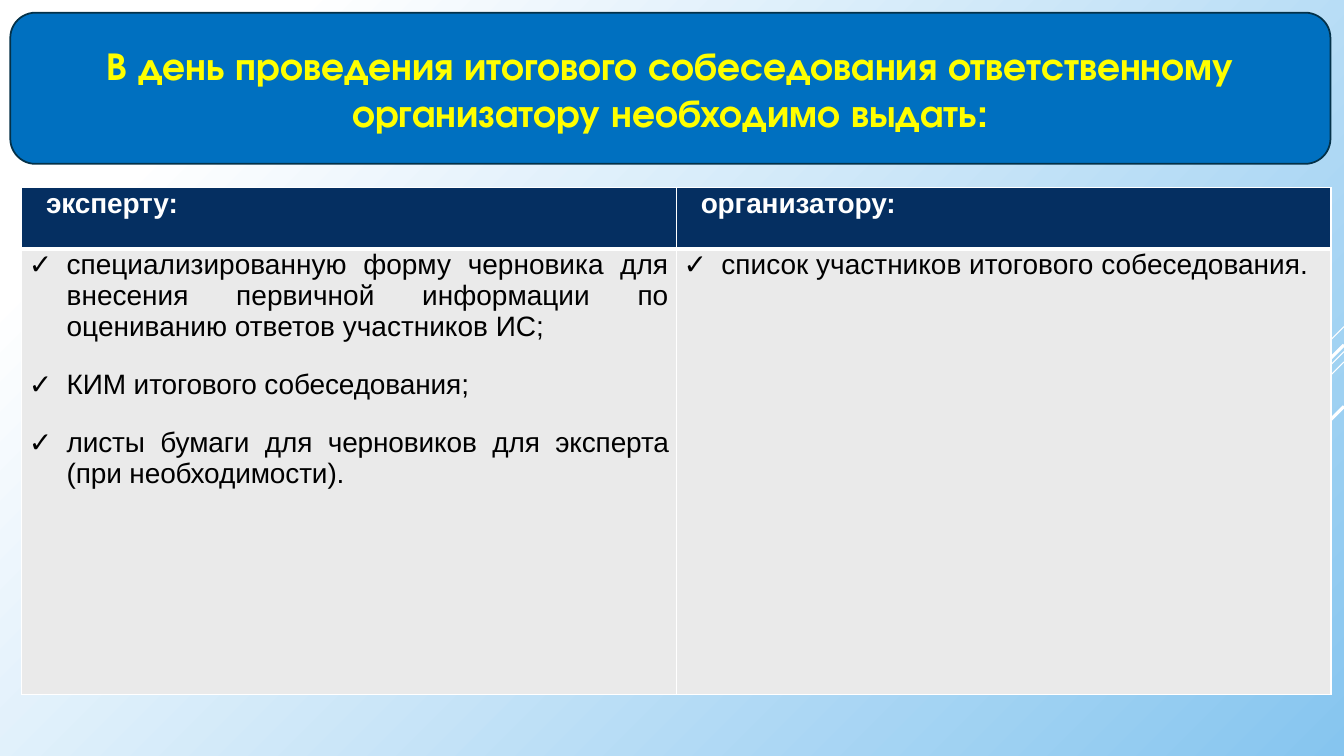
from lxml import etree
from pptx import Presentation
from pptx import util as u
from pptx.dml.color import RGBColor
from pptx.enum import shapes, text
from pptx.oxml.ns import qn

TITLE = "В день проведения итогового собеседования ответственному организатору необходимо выдать:"
# Each column: heading, then its items as (wording, letter spacing in 1/100 pt)
COLUMNS = [
    ("эксперту:", [
        ("специализированную форму черновика для внесения первичной информации "
         "по оцениванию ответов участников ИС;", 0),
        ("КИМ итогового собеседования;", -10),
        ("листы бумаги для черновиков для эксперта (при необходимости).", -10),
    ]),
    ("организатору:", [("список участников итогового собеседования.", 0)]),
]
# Diagonal strokes from the right edge: top, extent (cm), width (pt)
STROKES = [(8.23, 2.54, 0.75), (8.86, 8.28, 0.75), (9.12, 5.26, 0.75),
           (8.69, 4.85, 2.25), (10.24, 3.53, 2.25)]
COLORS = {"white": "FFFFFF", "sky": "86C5EF", "banner": "0070C0", "outline": "043148",
          "title": "FFFF00", "header": "052F61", "body": "EAEAEA", "black": "000000"}
SLIDE_W, SLIDE_H = 33.87, 19.05
COL_W, ROW_H = 16.5, (1.54, 11.23)


def rgb(name):
    return RGBColor.from_string(COLORS[name])


def add_span(para, wording, font, size, color, bold, spacing=0):
    span = para.add_run()
    span.text = wording
    span.font.name, span.font.size, span.font.bold = font, u.Pt(size), bold
    span.font.color.rgb = rgb(color)
    if spacing:
        span.font._element.set("spc", str(spacing))


def format_para(para, margin, indent=0, bullet=None):
    para.alignment = text.PP_ALIGN.JUSTIFY
    props = para._p.get_or_add_pPr()
    props.set("marL", str(u.Cm(margin)))
    props.set("indent", str(u.Cm(indent)))
    if bullet:
        etree.SubElement(props, qn("a:buFont")).set("typeface", "Arial")
        etree.SubElement(props, qn("a:buChar")).set("char", bullet)


def format_cell(cell, fill, top, bottom):
    cell.margin_left = cell.margin_right = u.Cm(0.19)
    cell.margin_top = cell.margin_bottom = 0
    props = cell._tc.get_or_add_tcPr()
    for side, width in (("L", 1), ("R", 1), ("T", top), ("B", bottom)):
        border = etree.SubElement(props, qn("a:ln" + side), w=str(u.Pt(width)))
        solid = etree.SubElement(border, qn("a:solidFill"))
        etree.SubElement(solid, qn("a:srgbClr"), val=COLORS["white"])
    cell.fill.solid()
    cell.fill.fore_color.rgb = rgb(fill)


def main():
    deck = Presentation()
    deck.slide_width, deck.slide_height = u.Cm(SLIDE_W), u.Cm(SLIDE_H)
    page = deck.slides.add_slide(deck.slide_layouts[6])

    # Background gradient
    backdrop = page.background.fill
    backdrop.gradient()
    backdrop.gradient_angle = 315
    for stop, (color, position) in zip(backdrop.gradient_stops, [("white", 0.14), ("sky", 1)]):
        stop.color.rgb = rgb(color)
        stop.position = position

    # Diagonal strokes
    for top, extent, width in STROKES:
        stroke = page.shapes.add_connector(
            shapes.MSO_CONNECTOR.STRAIGHT, u.Cm(SLIDE_W), u.Cm(top),
            u.Cm(SLIDE_W - extent), u.Cm(top + extent))
        stroke.line.color.rgb = rgb("white")
        stroke.line.width = u.Pt(width)
        etree.SubElement(stroke._element.spPr, qn("a:effectLst"))

    # Title banner
    banner = page.shapes.add_shape(shapes.MSO_SHAPE.ROUNDED_RECTANGLE,
                                   u.Cm(0.26), u.Cm(0.32), u.Cm(33.27), u.Cm(3.81))
    banner.shadow.inherit = False
    banner.fill.solid()
    banner.fill.fore_color.rgb = rgb("banner")
    banner.line.color.rgb = rgb("outline")
    banner.line.width = u.Pt(1.25)
    frame = banner.text_frame
    frame.word_wrap = True
    frame.vertical_anchor = text.MSO_ANCHOR.MIDDLE
    para = frame.paragraphs[0]
    para.alignment = text.PP_ALIGN.CENTER
    add_span(para, TITLE, "TeX Gyre Adventor", 28, "title", True)

    # Table
    table = page.shapes.add_table(2, len(COLUMNS), u.Cm(0.54), u.Cm(4.73),
                                  u.Cm(COL_W * len(COLUMNS)), u.Cm(sum(ROW_H))).table
    table.horz_banding = False
    for row, height in zip(table.rows, ROW_H):
        row.height = u.Cm(height)
    for col, (heading, items) in enumerate(COLUMNS):
        table.columns[col].width = u.Cm(COL_W)
        head, body = table.cell(0, col), table.cell(1, col)
        format_cell(head, "header", 1, 3)
        format_cell(body, "body", 3, 1)
        para = head.text_frame.paragraphs[0]
        format_para(para, 0.43)
        add_span(para, heading, "Arial", 20, "white", True, -10)
        frame = body.text_frame
        for i, (wording, spacing) in enumerate(items):
            para = frame.add_paragraph() if i else frame.paragraphs[0]
            if i:
                para.space_before = u.Pt(19)
            format_para(para, 0.95, -0.95, "✓")
            add_span(para, wording, "Arial", 20, "black", False, spacing)

    deck.save("out.pptx")


if __name__ == "__main__":
    main()
